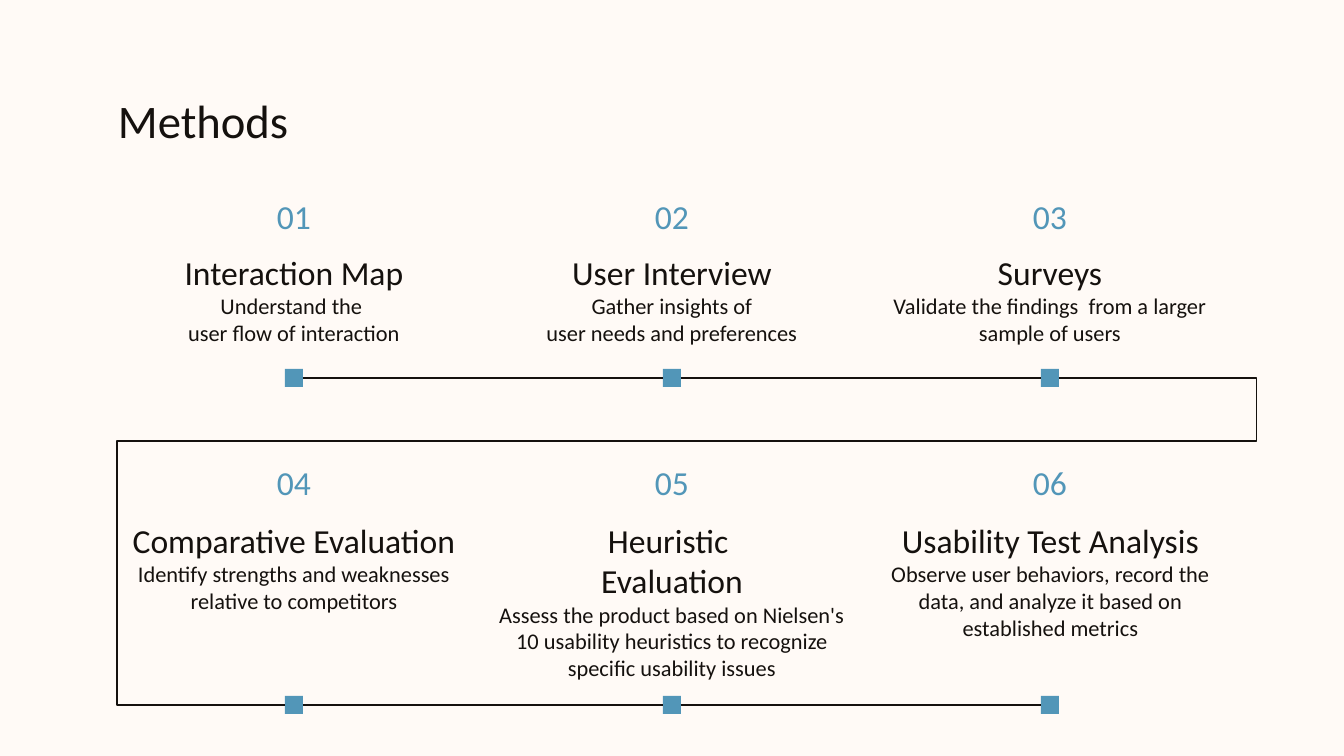
"""Build the Methods slide: six numbered steps along a winding line."""
from dataclasses import dataclass

from lxml.etree import SubElement
from pptx import Presentation
from pptx.dml.color import RGBColor
from pptx.enum.shapes import MSO_CONNECTOR as Link, MSO_SHAPE as Shape
from pptx.enum.text import MSO_ANCHOR as Anchor, MSO_AUTO_SIZE as Fit, PP_ALIGN as Align
from pptx.oxml.ns import qn
from pptx.util import Emu, Pt

SCALE = 914400 / 134.4
CREAM = RGBColor(0xFF, 0xFA, 0xF6)
INK = RGBColor(0x15, 0x11, 0x0E)
BLUE = RGBColor(0x52, 0x96, 0xB8)
FONT = "Calibri"
PAD = 13
SIDE = 18
WIDE = 378
MIDS = (294, 672, 1050)
TURN_X, TURN_Y, BACK_X = 1256, 441, 117


@dataclass(frozen=True)
class Row:
    num_y: int
    text_y: int
    text_h: int
    line_y: int


@dataclass(frozen=True)
class Step:
    heads: tuple[str, ...]
    notes: tuple[str, ...]
    width: int = WIDE


ROWS = (Row(183, 239, 109, 378), Row(449, 507, 179, 705))
STEPS = (
    Step(("Interaction Map",), ("Understand the ", "user flow of interaction")),
    Step(("User Interview",), ("Gather insights of", "user needs and preferences")),
    Step(("Surveys",), ("Validate the findings  from a larger sample of users",)),
    Step(("Comparative Evaluation",),
         ("Identify strengths and weaknesses relative to competitors",)),
    Step(("Heuristic ", "Evaluation"),
         ("Assess the product based on Nielsen's 10 usability heuristics "
          "to recognize specific usability issues",), 398),
    Step(("Usability Test Analysis",),
         ("Observe user behaviors, record the data, and analyze it "
          "based on established metrics",), 391),
)


def px(num: int) -> Emu:
    """Turn px into EMU."""
    return Emu(round(num * SCALE))


def write(frame, lines: list[tuple[str, int]], color: RGBColor, align: Align) -> None:
    """Fill a text frame with one paragraph per line of text and size."""
    frame.word_wrap = True
    frame.auto_size = Fit.NONE
    frame.vertical_anchor = Anchor.TOP
    frame.margin_left = frame.margin_right = px(PAD)
    frame.margin_top = frame.margin_bottom = px(PAD)
    for spot, (text, size) in enumerate(lines):
        para = frame.add_paragraph() if spot else frame.paragraphs[0]
        para.text = text
        para.alignment = align
        font = para.font
        font.name, font.size, font.color.rgb = FONT, Pt(size), color


def label(slide, mid: int, top: int, width: int, height: int,
          lines: list[tuple[str, int]], color: RGBColor) -> None:
    """Add a text box centred on mid."""
    box = slide.shapes.add_textbox(px(mid - width // 2), px(top), px(width), px(height))
    write(box.text_frame, lines, color, Align.CENTER)


def mark(slide, mid: int, y: int) -> None:
    """Add a square stop centred on the line."""
    half = SIDE // 2
    stop = slide.shapes.add_shape(Shape.RECTANGLE, px(mid - half), px(y - half),
                                  px(SIDE), px(SIDE))
    stop.shadow.inherit = False
    stop.fill.solid()
    stop.fill.fore_color.rgb = BLUE
    stop.line.fill.background()


def join(slide, kind: Link, x1: int, y1: int, x2: int, y2: int):
    """Add a thin connector without a shadow."""
    link = slide.shapes.add_connector(kind, px(x1), px(y1), px(x2), px(y2))
    link.line.color.rgb = INK
    link.line.width = Pt(0.75)
    SubElement(link._element.spPr, qn("a:effectLst"))
    return link


def wind(slide) -> None:
    """Lead the line from the end of the first row to the start of the second."""
    x1, x2 = MIDS[-1] + SIDE // 2, MIDS[0] - SIDE // 2
    y1, y2 = (row.line_y for row in ROWS)
    link = join(slide, Link.ELBOW, x1, y1, x2, y2)
    geom = link._element.spPr.find(qn("a:prstGeom"))
    geom.set("prst", "bentConnector5")
    guides = geom.find(qn("a:avLst"))
    bends = ((x1 - TURN_X) / (x1 - x2), (TURN_Y - y1) / (y2 - y1),
             (x1 - BACK_X) / (x1 - x2))
    for spot, bend in enumerate(bends, 1):
        SubElement(guides, qn("a:gd"), name=f"adj{spot}",
                   fmla=f"val {round(bend * 100000)}")


def main() -> None:
    """Draw and save the slide."""
    deck = Presentation()
    deck.slide_width, deck.slide_height = px(1344), px(756)
    slide = deck.slides.add_slide(deck.slide_layouts[5])
    back = slide.background.fill
    back.solid()
    back.fore_color.rgb = CREAM

    title = slide.shapes.title
    title.left, title.top, title.width, title.height = px(105), px(79), px(1134), px(81)
    write(title.text_frame, [("Methods", 25)], INK, Align.LEFT)

    for spot, step in enumerate(STEPS):
        row, mid = ROWS[spot // len(MIDS)], MIDS[spot % len(MIDS)]
        label(slide, mid, row.num_y, WIDE, 67, [(f"{spot + 1:02}", 18)], BLUE)
        lines = [(text, 18) for text in step.heads] + [(text, 12) for text in step.notes]
        label(slide, mid, row.text_y, step.width, row.text_h, lines, INK)
        mark(slide, mid, row.line_y)

    half = SIDE // 2
    for row in ROWS:
        for start, end in zip(MIDS, MIDS[1:]):
            join(slide, Link.STRAIGHT, start + half, row.line_y, end - half, row.line_y)
    wind(slide)
    deck.save("out.pptx")


if __name__ == "__main__":
    main()
